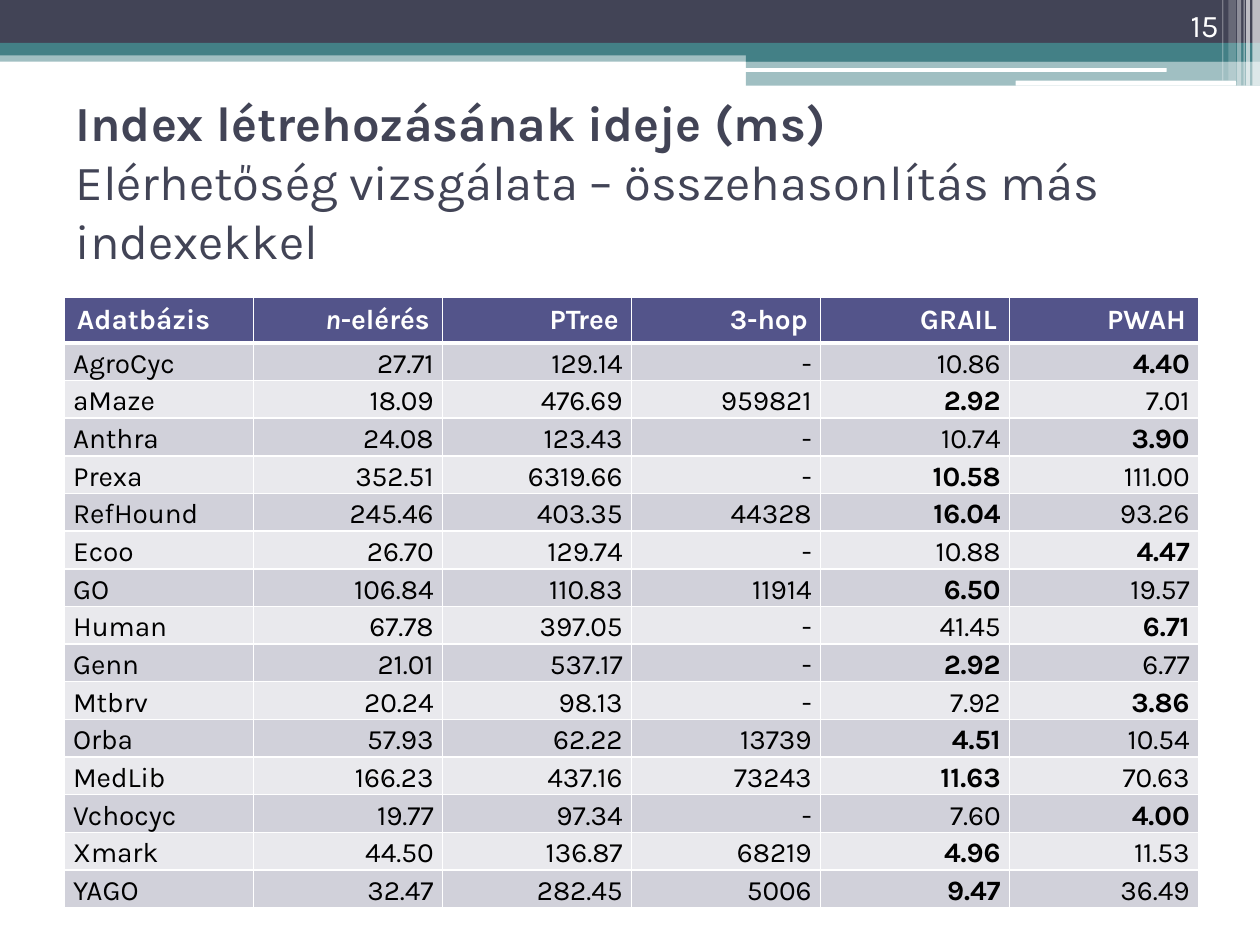
"""Build the slide that compares index creation times across reachability indexes."""
from dataclasses import dataclass
from typing import NamedTuple

from lxml import etree
from pptx import Presentation
from pptx.dml.color import RGBColor
from pptx.enum.shapes import MSO_SHAPE
from pptx.enum.text import MSO_ANCHOR, MSO_AUTO_SIZE, PP_ALIGN
from pptx.oxml.ns import qn
from pptx.util import Pt

RECTANGLE, ROUNDED = MSO_SHAPE.RECTANGLE, MSO_SHAPE.ROUNDED_RECTANGLE
LEFT, RIGHT = PP_ALIGN.LEFT, PP_ALIGN.RIGHT
MIDDLE, BOTTOM = MSO_ANCHOR.MIDDLE, MSO_ANCHOR.BOTTOM
NO_AUTOFIT = MSO_AUTO_SIZE.NONE
TITLE_ONLY = 5


@dataclass(frozen=True)
class Theme:
    font: str = "Karla"
    title_size: float = 28
    number_size: float = 18
    table_size: float = 16
    dark: str = "424456"
    teal: str = "438086"
    white: str = "FFFFFF"
    black: str = "000000"
    header: str = "53548A"
    bands: tuple[str, str] = ("D1D1DA", "E9E9ED")


class Bar(NamedTuple):
    left: float
    top: float
    width: float
    height: float
    color: str
    opacity: int = 100
    outline: int = RECTANGLE


class Measurement(NamedTuple):
    database: str
    times: tuple[str, ...]


THEME = Theme()

BARS = [
    Bar(0, 28.8, 720, 6.5, THEME.teal, 50),
    Bar(0, 0, 720, 24.5, THEME.dark),
    Bar(0, 24.5, 720, 7.2, THEME.teal),
    Bar(426.2, 28.1, 293.8, 7.2, THEME.teal),
    Bar(426.2, 34.6, 293.8, 14.4, THEME.teal, 50),
    Bar(425.5, 38.9, 241.2, 2.2, THEME.white, outline=ROUNDED),
    Bar(580.3, 46.1, 126, 2.9, THEME.white, outline=ROUNDED),
    Bar(715.7, 0, 4.3, 49, THEME.white, 65),
    Bar(712.1, 0, 2.2, 49, THEME.white, 65),
    Bar(710.6, 0, 0.72, 49, THEME.white, 60),
    Bar(707, 0, 2.2, 49, THEME.white, 40),
    Bar(702, 0, 4.3, 46.1, THEME.white, 20),
    Bar(698.4, 0, 0.72, 46.1, THEME.white, 30),
]

INDEXES = [("n", "-elérés"), ("PTree",), ("3-hop",), ("GRAIL",), ("PWAH",)]

MEASUREMENTS = [
    Measurement("AgroCyc", ("27.71", "129.14", "-", "10.86", "4.40")),
    Measurement("aMaze", ("18.09", "476.69", "959821", "2.92", "7.01")),
    Measurement("Anthra", ("24.08", "123.43", "-", "10.74", "3.90")),
    Measurement("Prexa", ("352.51", "6319.66", "-", "10.58", "111.00")),
    Measurement("RefHound", ("245.46", "403.35", "44328", "16.04", "93.26")),
    Measurement("Ecoo", ("26.70", "129.74", "-", "10.88", "4.47")),
    Measurement("GO", ("106.84", "110.83", "11914", "6.50", "19.57")),
    Measurement("Human", ("67.78", "397.05", "-", "41.45", "6.71")),
    Measurement("Genn", ("21.01", "537.17", "-", "2.92", "6.77")),
    Measurement("Mtbrv", ("20.24", "98.13", "-", "7.92", "3.86")),
    Measurement("Orba", ("57.93", "62.22", "13739", "4.51", "10.54")),
    Measurement("MedLib", ("166.23", "437.16", "73243", "11.63", "70.63")),
    Measurement("Vchocyc", ("19.77", "97.34", "-", "7.60", "4.00")),
    Measurement("Xmark", ("44.50", "136.87", "68219", "4.96", "11.53")),
    Measurement("YAGO", ("32.47", "282.45", "5006", "9.47", "36.49")),
]

TABLE_LEFT, TABLE_TOP = 36.8, 170
COLUMN_WIDTH, HEADER_HEIGHT, ROW_HEIGHT = 108, 25.9, 21.5


def style_run(run, size: float, color: str, bold: bool = False) -> None:
    """Apply the theme font with a size, colour and weight."""
    run.font.name = THEME.font
    run.font.size = Pt(size)
    run.font.bold = bold
    run.font.color.rgb = RGBColor.from_string(color)


def draw_bar(slide, bar: Bar) -> None:
    """Draw one decorative bar of the page header."""
    shape = slide.shapes.add_shape(
        bar.outline, Pt(bar.left), Pt(bar.top), Pt(bar.width), Pt(bar.height))
    shape.shadow.inherit = False
    shape.line.fill.background()
    shape.fill.solid()
    shape.fill.fore_color.rgb = RGBColor.from_string(bar.color)
    if bar.opacity < 100:
        color = shape.fill._xPr.find(f".//{qn('a:srgbClr')}")
        etree.SubElement(color, qn("a:alpha"), val=str(bar.opacity * 1000))


def write_title(slide) -> None:
    """Place the two-part title in the title placeholder."""
    title = slide.shapes.title
    title.left, title.top, title.width, title.height = Pt(36), Pt(61.2), Pt(648), Pt(84.2)
    frame = title.text_frame
    frame.text = ("Index létrehozásának ideje (ms)\v"
                  "Elérhetőség vizsgálata – összehasonlítás más indexekkel")
    frame.word_wrap, frame.auto_size = True, NO_AUTOFIT
    frame.vertical_anchor = MIDDLE
    heading = frame.paragraphs[0]
    heading.alignment = LEFT
    for run, bold in zip(heading.runs, (True, False)):
        style_run(run, THEME.title_size, THEME.dark, bold)


def write_page_number(slide, number: str) -> None:
    """Write the page number in the header's right corner."""
    frame = slide.shapes.add_textbox(Pt(643.7), Pt(0), Pt(59.8), Pt(28.8)).text_frame
    frame.text = number
    frame.word_wrap = True
    frame.vertical_anchor = BOTTOM
    frame.paragraphs[0].alignment = RIGHT
    style_run(frame.paragraphs[0].runs[0], THEME.number_size, THEME.white)


def set_borders(cell, top: float = 1, bottom: float = 1) -> None:
    """Give a cell white borders of the given widths."""
    properties = cell._tc.get_or_add_tcPr()
    widths = {"a:lnL": 1, "a:lnR": 1, "a:lnT": top, "a:lnB": bottom}
    for position, (side, width) in enumerate(widths.items()):
        border = etree.Element(qn(side), w=str(Pt(width)))
        fill = etree.SubElement(border, qn("a:solidFill"))
        etree.SubElement(fill, qn("a:srgbClr"), val=THEME.white)
        properties.insert(position, border)


def fill_cell(cell, parts: tuple[str, ...], fill: str, color: str,
              bold: bool, alignment: PP_ALIGN):
    """Write the parts of a cell as runs and return its paragraph."""
    cell.fill.solid()
    cell.fill.fore_color.rgb = RGBColor.from_string(fill)
    paragraph = cell.text_frame.paragraphs[0]
    paragraph.alignment = alignment
    for part in parts:
        run = paragraph.add_run()
        run.text = part
        style_run(run, THEME.table_size, color, bold)
    return paragraph


def draw_table(slide) -> None:
    """Draw the table, with the shortest time of each row in bold."""
    column_count = len(INDEXES) + 1
    table = slide.shapes.add_table(
        len(MEASUREMENTS) + 1, column_count, Pt(TABLE_LEFT), Pt(TABLE_TOP),
        Pt(COLUMN_WIDTH * column_count),
        Pt(HEADER_HEIGHT + ROW_HEIGHT * len(MEASUREMENTS))).table
    for column in table.columns:
        column.width = Pt(COLUMN_WIDTH)
    table.rows[0].height = Pt(HEADER_HEIGHT)
    for column, parts in enumerate([("Adatbázis",), *INDEXES]):
        cell = table.cell(0, column)
        paragraph = fill_cell(cell, parts, THEME.header, THEME.white, True,
                              RIGHT if column else LEFT)
        paragraph.runs[0].font.italic = len(parts) > 1
        set_borders(cell, bottom=3)
    for row, measurement in enumerate(MEASUREMENTS, start=1):
        table.rows[row].height = Pt(ROW_HEIGHT)
        shortest = min((time for time in measurement.times if time != "-"), key=float)
        for column, value in enumerate((measurement.database, *measurement.times)):
            cell = table.cell(row, column)
            cell.margin_left = cell.margin_right = Pt(5)
            cell.margin_top = cell.margin_bottom = Pt(0)
            paragraph = fill_cell(cell, (value,), THEME.bands[(row - 1) % 2], THEME.black,
                                  value == shortest, RIGHT if column else LEFT)
            paragraph.line_spacing = 1.15
            set_borders(cell, top=3 if row == 1 else 1)


def main() -> None:
    """Assemble and save the slide."""
    presentation = Presentation()
    presentation.slide_width, presentation.slide_height = Pt(720), Pt(540)
    slide = presentation.slides.add_slide(presentation.slide_layouts[TITLE_ONLY])
    for bar in BARS:
        draw_bar(slide, bar)
    write_title(slide)
    draw_table(slide)
    write_page_number(slide, "15")
    presentation.save("out.pptx")


if __name__ == "__main__":
    main()
